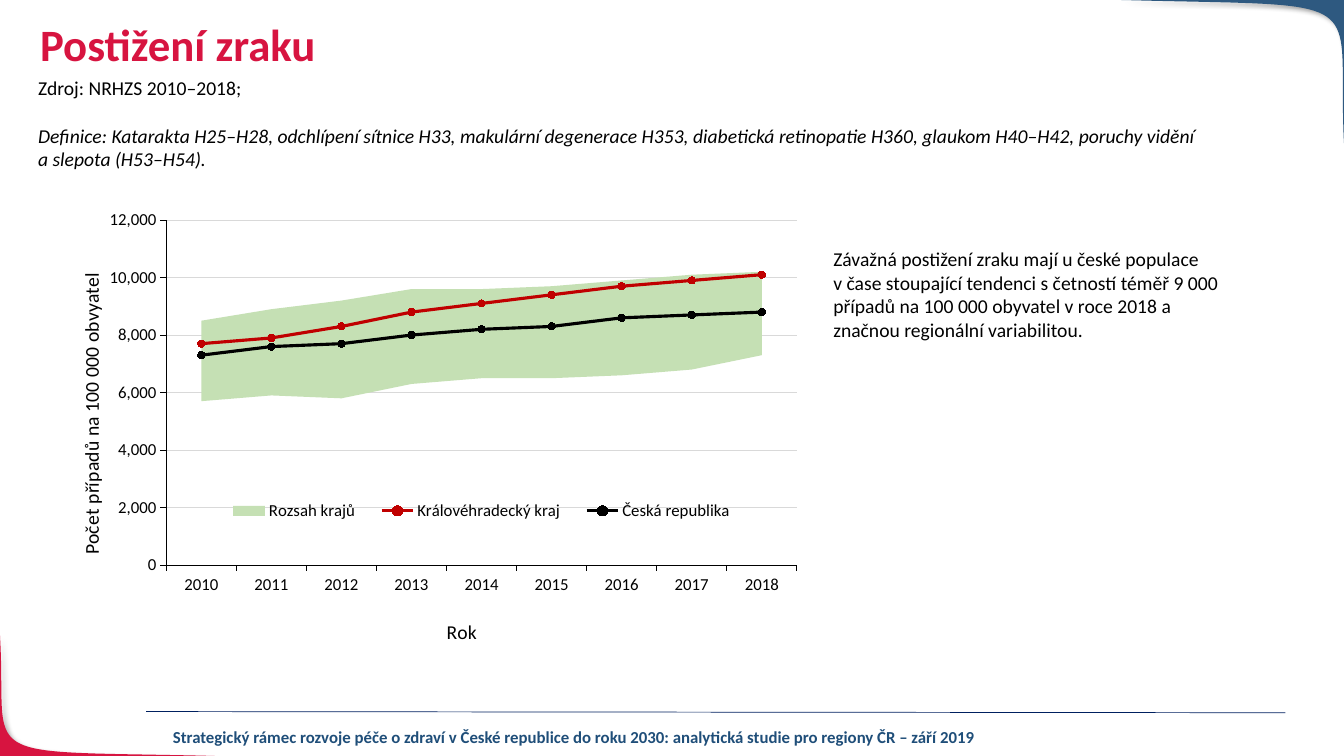
import pptx
import pptx.chart.data
import pptx.dml.color
import pptx.enum.chart
import pptx.enum.shapes
import pptx.enum.text
import pptx.oxml
import pptx.oxml.ns
import pptx.util
from pptx.util import Cm, Pt

FONT = "Calibri"
BLACK, RED, BLUE, NAVY = "000000", "D71440", "2E5980", "002060"
FOOTER_BLUE, GRID_GREY = "1F4E79", "D9D9D9"

TITLE = "Postižení zraku"
SOURCE = "Zdroj: NRHZS 2010–2018;"
DEFINITION = (
    "Definice: Katarakta H25–H28, odchlípení sítnice H33, makulární degenerace H353, "
    "diabetická retinopatie H360, glaukom H40–H42, poruchy vidění a slepota (H53–H54)."
)
COMMENT = (
    "Závažná postižení zraku mají u české populace\n"
    "v čase stoupající tendenci s četností téměř 9 000 případů na 100 000 obvyatel"
    .replace("obvyatel", "obyvatel")
    + " v roce 2018 a značnou regionální variabilitou."
)
FOOTER = (
    "Strategický rámec rozvoje péče o zdraví v České republice do roku 2030: "
    "analytická studie pro regiony ČR – září 2019"
)

YEARS = [str(year) for year in range(2010, 2019)]
REGION_RANGE = [
    ("Series 1", None, [5700, 5900, 5800, 6300, 6500, 6500, 6600, 6800, 7300]),
    ("Rozsah krajů", "C5E0B4", [2800, 3000, 3400, 3300, 3100, 3200, 3300, 3300, 2900]),
]
TRENDS = [
    ("Královéhradecký kraj", "C00000", [7700, 7900, 8300, 8800, 9100, 9400, 9700, 9900, 10100]),
    ("Česká republika", BLACK, [7300, 7600, 7700, 8000, 8200, 8300, 8600, 8700, 8800]),
]
YEAR_TITLE = "Rok"
RATE_TITLE = "Počet případů na 100 000 obvyatel"

# Start, two curve controls, end and slide corner, in cm
CORNERS = [
    (RED, [(5.41, 19.05), (-0.86, 18.9), (0.2, 19.28), (0, 16)], (0, 19.05)),
    (BLUE, [(28.22, 0), (34.8, 0.18), (33.68, -0.25), (33.87, 3.61)], (33.87, 0)),
]
CURVE_STEPS = 40


def rgb(hex_color):
    return pptx.dml.color.RGBColor.from_string(hex_color)


def chart_xml(tag, body=""):
    return pptx.oxml.parse_xml(f"<c:{tag} {pptx.oxml.ns.nsdecls('c')}>{body}</c:{tag}>")


def effects(shape, body=""):
    namespace = pptx.oxml.ns.nsdecls("a")
    shape._element.spPr.append(
        pptx.oxml.parse_xml(f"<a:effectLst {namespace}>{body}</a:effectLst>"))


def style(font, size, color=BLACK, bold=False, italic=False):
    font.name, font.size, font.bold, font.italic = FONT, Pt(size), bold, italic
    font.color.rgb = rgb(color)


def write(paragraph, text, size=14, align=None, spacing=None, before=None, **look):
    paragraph.text = text
    paragraph.alignment = align
    paragraph.line_spacing = spacing
    if before:
        paragraph.space_before = Pt(before)
    for run in paragraph.runs:
        style(run.font, size, **look)


def add_frame(slide, left, top, width, height):
    frame = slide.shapes.add_textbox(Cm(left), Cm(top), Cm(width), Cm(height)).text_frame
    frame.word_wrap = True
    return frame


def add_corner(slide, color, curve, corner):
    points = []
    for step in range(CURVE_STEPS + 1):
        t = step / CURVE_STEPS
        weights = [(1 - t) ** 3, 3 * t * (1 - t) ** 2, 3 * t ** 2 * (1 - t), t ** 3]
        points.append(tuple(Cm(sum(w * p[axis] for w, p in zip(weights, curve)))
                            for axis in (0, 1)))
    points.append((Cm(corner[0]), Cm(corner[1])))
    builder = slide.shapes.build_freeform(*points[0], scale=1.0)
    builder.add_line_segments(points[1:], close=True)
    shape = builder.convert_to_shape()
    shape.fill.solid()
    shape.fill.fore_color.rgb = rgb(color)
    shape.line.fill.background()
    effects(shape, f'<a:outerShdw blurRad="{Pt(4)}" dist="{Pt(3)}" dir="2700000">'
                   f'<a:srgbClr val="{BLACK}"><a:alpha val="40000"/></a:srgbClr></a:outerShdw>')


def place(element, target=None, **fractions):
    """Set a manual layout, in fractions of the chart, on a chart part."""
    layout = element.find(pptx.oxml.ns.qn("c:layout"))
    if layout is None:
        layout = chart_xml("layout")
        element.insert(0, layout)
    body = f'<c:layoutTarget val="{target}"/>' if target else ""
    body += "".join(f'<c:{key}Mode val="edge"/>' for key in "xy")
    body += "".join(f'<c:{key} val="{value}"/>' for key, value in fractions.items())
    layout.append(chart_xml("manualLayout", body))
    return layout


def style_axis(axis, title, x, y):
    style(axis.tick_labels.font, 12)
    axis.format.line.color.rgb = rgb(BLACK)
    axis.format.line.width = Pt(0.75)
    axis.major_tick_mark = pptx.enum.chart.XL_TICK_MARK.OUTSIDE
    axis.has_major_gridlines = False
    axis.has_title = True
    write(axis.axis_title.text_frame.paragraphs[0], title)
    place(axis.axis_title._element, x=x, y=y)


def split_trends(chart):
    """Move the trend series from the area plot to a line plot on the same axes."""
    area = chart.plots[0]._element
    line = chart_xml("lineChart", '<c:grouping val="standard"/><c:varyColors val="0"/>')
    for series in area.findall(pptx.oxml.ns.qn("c:ser"))[len(REGION_RANGE):]:
        line.append(series)
    line.append(chart_xml("marker"))
    line[-1].set("val", "1")
    for axis_id in area.findall(pptx.oxml.ns.qn("c:axId")):
        line.append(pptx.oxml.parse_xml(
            f'<c:axId {pptx.oxml.ns.nsdecls("c")} val="{axis_id.get("val")}"/>'))
    area.addnext(line)


def add_rate_chart(slide):
    data = pptx.chart.data.CategoryChartData(number_format="#,##0")
    data.categories = YEARS
    for name, _, values in REGION_RANGE + TRENDS:
        data.add_series(name, values)
    chart = slide.shapes.add_chart(pptx.enum.chart.XL_CHART_TYPE.AREA_STACKED,
                                   Cm(1.09), Cm(5.05), Cm(19.38), Cm(12.42), data).chart
    chart.has_title = False
    style(chart.font, 12)
    split_trends(chart)
    ranges, trends = chart.plots
    ranges.vary_by_categories = False

    for series, (_, color, _) in zip(ranges.series, REGION_RANGE):
        if color:
            series.format.fill.solid()
            series.format.fill.fore_color.rgb = rgb(color)
        else:
            series.format.fill.background()
        series.format.line.fill.background()
    for series, (_, color, _) in zip(trends.series, TRENDS):
        series.smooth = False
        series.format.line.color.rgb = rgb(color)
        series.format.line.width = Pt(2.25)
        series.marker.style = pptx.enum.chart.XL_MARKER_STYLE.CIRCLE
        series.marker.size = 5
        series.marker.format.fill.solid()
        series.marker.format.fill.fore_color.rgb = rgb(color)
        series.marker.format.line.color.rgb = rgb(color)

    rates = chart.value_axis
    style_axis(chart.category_axis, YEAR_TITLE, x=0.52, y=0.84)
    style_axis(rates, RATE_TITLE, x=0.04, y=0.14)
    rates.minimum_scale, rates.maximum_scale, rates.major_unit = 0, 12000, 2000
    rates.tick_labels.number_format = "#,##0"
    rates.tick_labels.number_format_is_linked = False
    rates.major_gridlines.format.line.color.rgb = rgb(GRID_GREY)
    rates.major_gridlines.format.line.width = Pt(0.75)
    rates._element.find(pptx.oxml.ns.qn("c:crossBetween")).set("val", "between")
    place(chart._chartSpace.chart.plotArea, "inner", x=0.16, y=0.04, w=0.82, h=0.7)

    chart.has_legend = True
    chart.legend.position = pptx.enum.chart.XL_LEGEND_POSITION.BOTTOM
    chart.legend.include_in_layout = False
    style(chart.legend.font, 12)
    layout = place(chart.legend._element, x=0.22, y=0.6, w=0.7, h=0.06)
    layout.addprevious(chart_xml("legendEntry", '<c:idx val="0"/><c:delete val="1"/>'))


def main():
    deck = pptx.Presentation()
    deck.slide_width, deck.slide_height = Cm(33.87), Cm(19.05)
    slide = deck.slides.add_slide(deck.slide_layouts[6])
    for corner in CORNERS:
        add_corner(slide, *corner)
    rule = slide.shapes.add_connector(pptx.enum.shapes.MSO_CONNECTOR.STRAIGHT,
                                      Cm(3.68), Cm(17.93), Cm(32.39), Cm(17.96))
    rule.line.color.rgb = rgb(NAVY)
    rule.line.width = Pt(0.5)
    effects(rule)

    write(add_frame(slide, 3.51, 18.19, 21.92, 0.76).paragraphs[0], FOOTER, size=12,
          color=FOOTER_BLUE, bold=True, align=pptx.enum.text.PP_ALIGN.CENTER)
    write(add_frame(slide, 0.76, 0.46, 29.21, 1.75).paragraphs[0], TITLE, size=32,
          color=RED, bold=True, spacing=0.9)
    about = add_frame(slide, 0.71, 1.8, 29.97, 2.64)
    write(about.paragraphs[0], SOURCE)
    write(about.add_paragraph(), DEFINITION, before=17, italic=True)
    add_rate_chart(slide)
    write(add_frame(slide, 20.75, 6.1, 10.62, 9.17).paragraphs[0], COMMENT)
    deck.save("out.pptx")


if __name__ == "__main__":
    main()
